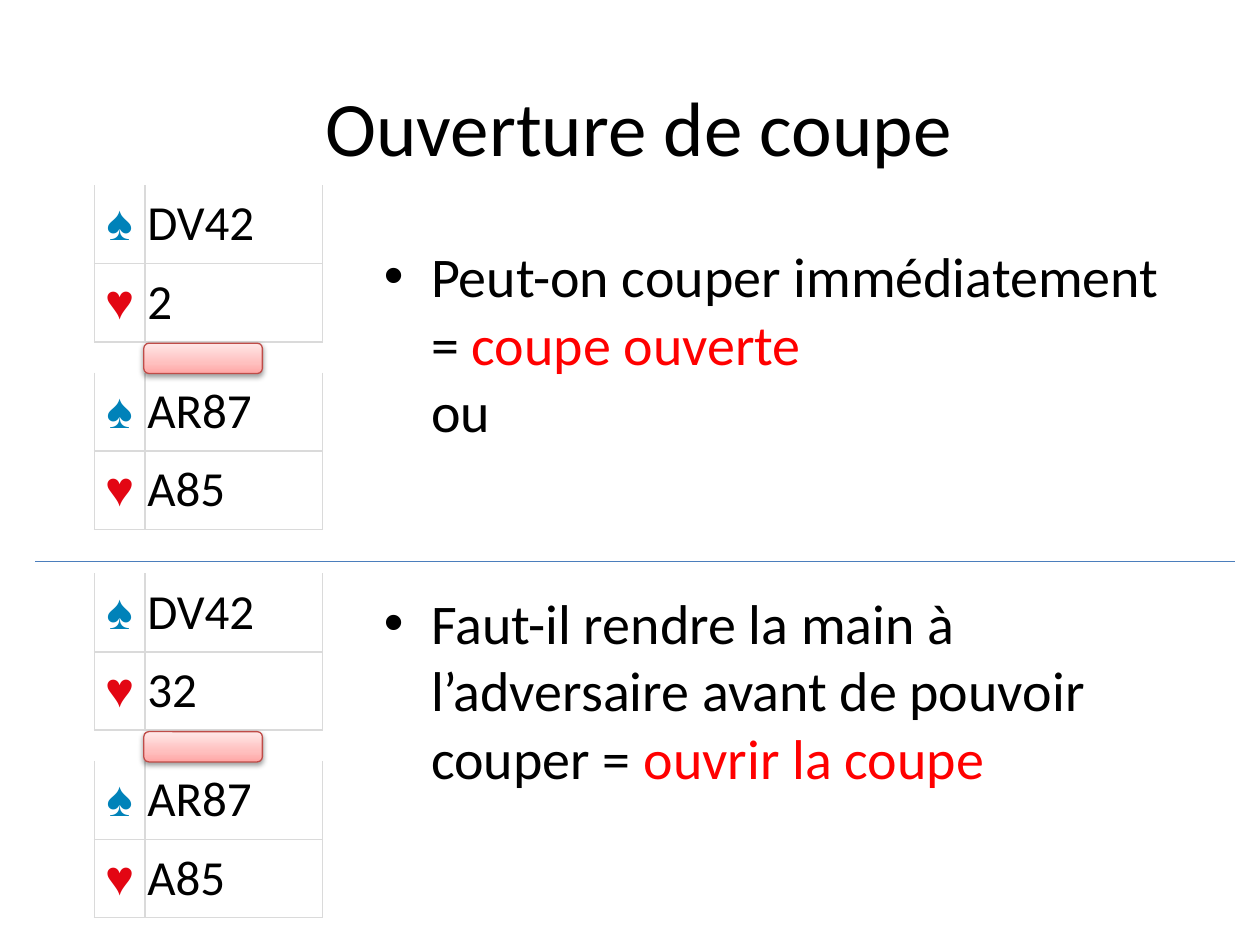
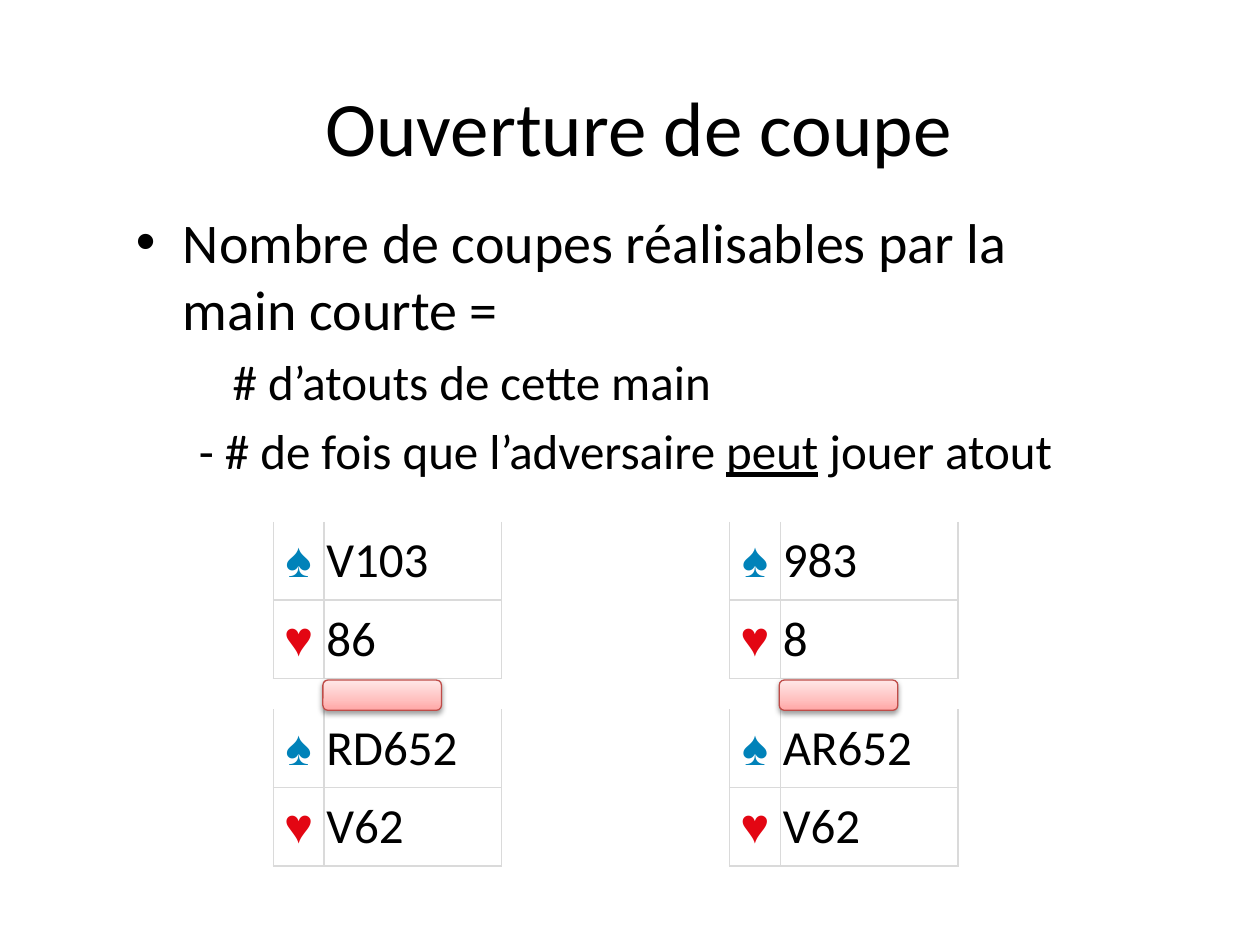
import pptx
import pptx.util
import pptx.dml.color
import pptx.enum.shapes
import pptx.enum.text
import pptx.oxml
import pptx.oxml.ns
from lxml import etree
from pptx.util import Cm, Pt

BLACK, RED, WHITE = "000000", "FF0000", "FFFFFF"
SPADE_BLUE, HEART_RED, GRID_GREY = "0082B9", "E30613", "DADADA"
MAT_EDGE, DIVIDER_BLUE = "BF4C48", "4B7EBC"
MAT_STOPS = [(0, "FFA6A5"), (35, "FFC0BF"), (100, "FFE7E7")]
SUITS = [("♠", SPADE_BLUE), ("♥", HEART_RED)]
NAMESPACE = pptx.oxml.ns.nsdecls("a")
qn = pptx.oxml.ns.qn

COLUMN_WIDTHS = [1.02, 3.58]
ROW_HEIGHT = 1.58
HAND_STEP = 3.78


def color(hex_text):
    return pptx.dml.color.RGBColor.from_string(hex_text)


def add_deal(slide, left, top, hands):
    """Two hands, one above the other, with a card mat between them."""
    for hand_index, holdings in enumerate(hands):
        frame = slide.shapes.add_table(
            2, 2, Cm(left), Cm(top + hand_index * HAND_STEP),
            Cm(sum(COLUMN_WIDTHS)), Cm(2 * ROW_HEIGHT))
        table = frame.table
        table.first_row = table.horz_banding = False
        for column, width in zip(table.columns, COLUMN_WIDTHS):
            column.width = Cm(width)
        for row_index, ((symbol, suit_color), cards) in enumerate(zip(SUITS, holdings)):
            table.rows[row_index].height = Cm(ROW_HEIGHT)
            contents = [
                (symbol, "Times New Roman", suit_color, pptx.enum.text.PP_ALIGN.CENTER),
                (cards, "Calibri", BLACK, pptx.enum.text.PP_ALIGN.LEFT)]
            for column_index, (text, font_name, text_color, alignment) in enumerate(contents):
                cell = table.cell(row_index, column_index)
                # Borders on every side except the top of the hand
                properties = cell._tc.get_or_add_tcPr()
                for side in "LRTB":
                    line = etree.SubElement(properties, qn("a:ln" + side), w=str(Pt(1)))
                    if side == "T" and row_index == 0:
                        etree.SubElement(line, qn("a:noFill"))
                    else:
                        fill = etree.SubElement(line, qn("a:solidFill"))
                        etree.SubElement(fill, qn("a:srgbClr"), val=GRID_GREY)
                cell.fill.solid()
                cell.fill.fore_color.rgb = color(WHITE)
                cell.margin_left = cell.margin_right = Cm(0.05)
                cell.margin_top = cell.margin_bottom = Cm(0.05)
                cell.vertical_anchor = pptx.enum.text.MSO_ANCHOR.MIDDLE
                cell.text_frame.text = text
                paragraph = cell.text_frame.paragraphs[0]
                paragraph.alignment = alignment
                font = paragraph.runs[0].font
                font.name, font.size = font_name, Pt(28)
                font.color.rgb = color(text_color)

    # Card mat with gradient and soft shadow
    mat = slide.shapes.add_shape(
        pptx.enum.shapes.MSO_SHAPE.ROUNDED_RECTANGLE,
        Cm(left + 1), Cm(top + 3.19), Cm(2.39), Cm(0.61))
    mat.line.color.rgb = color(MAT_EDGE)
    mat.line.width = Pt(0.75)
    mat.shadow.inherit = False
    shape_properties = mat._element.spPr
    stops = "".join(
        f'<a:gs pos="{position * 1000}"><a:srgbClr val="{stop_color}"/></a:gs>'
        for position, stop_color in MAT_STOPS)
    shape_properties.find(qn("a:prstGeom")).addnext(pptx.oxml.parse_xml(
        f'<a:gradFill {NAMESPACE}><a:gsLst>{stops}</a:gsLst>'
        '<a:lin ang="16200000" scaled="0"/></a:gradFill>'))
    shape_properties.find(qn("a:effectLst")).append(pptx.oxml.parse_xml(
        f'<a:outerShdw {NAMESPACE} blurRad="{Pt(3.1)}" dist="{Pt(1.6)}" dir="5400000" '
        f'rotWithShape="0"><a:srgbClr val="{BLACK}"><a:alpha val="38000"/></a:srgbClr>'
        '</a:outerShdw>'))


# Body paragraphs: bullet, indent (cm), size, space before (pt), runs (text, color, underline)
# Deals: left, top (cm), hands
slides = [
    {
        "body_box": (7.49, 4.75, 16.64, 12.57),
        "paragraphs": [
            (True, 0.95, 32, 0, [("Peut-on couper immédiatement = ", BLACK, False),
                                 ("coupe ouverte", RED, False),
                                 ("\v", BLACK, False),
                                 ("ou", BLACK, False)]),
            (True, 0.95, 32, 83, [("Faut-il rendre la main à l’adversaire avant de pouvoir "
                                   "couper = ", BLACK, False),
                                  ("ouvrir la coupe", RED, False)]),
        ],
        "deals": [(1.9, 3.73, [("DV42", "2"), ("AR87", "A85")]),
                  (1.9, 11.56, [("DV42", "32"), ("AR87", "A85")])],
        "divider": True,
    },
    {
        "body_box": (2.49, 4.06, 19.02, 6.58),
        "paragraphs": [
            (True, 0.95, 32, 0, [("Nombre de coupes réalisables par la main courte =",
                                  BLACK, False)]),
            (False, 1.95, 28, 5.6, [("# d’atouts de cette main", BLACK, False)]),
            (False, 1.27, 28, 5.6, [("- # de fois que l’adversaire ", BLACK, False),
                                    ("peut", BLACK, True),
                                    (" jouer atout", BLACK, False)]),
        ],
        "deals": [(5.51, 10.52, [("V103", "86"), ("RD652", "V62")]),
                  (14.71, 10.52, [("983", "8"), ("AR652", "V62")])],
        "divider": False,
    },
]

presentation = pptx.Presentation()
presentation.slide_width = Cm(25.4)
presentation.slide_height = Cm(19.05)

for content in slides:
    slide = presentation.slides.add_slide(presentation.slide_layouts[5])

    # Title
    title = slide.shapes.title
    title.left, title.top, title.width, title.height = Cm(1.45), Cm(0.94), Cm(22.86), Cm(3.18)
    title.text_frame.text = "Ouverture de coupe"
    title.text_frame.vertical_anchor = pptx.enum.text.MSO_ANCHOR.MIDDLE
    title_paragraph = title.text_frame.paragraphs[0]
    title_paragraph.alignment = pptx.enum.text.PP_ALIGN.CENTER
    title_font = title_paragraph.runs[0].font
    title_font.name, title_font.size = "Calibri", Pt(44)
    title_font.color.rgb = color(BLACK)

    # Body text
    body = slide.shapes.add_textbox(*[Cm(length) for length in content["body_box"]])
    body.text_frame.word_wrap = True
    for index, (bullet, indent, size, space_before, runs) in enumerate(content["paragraphs"]):
        paragraph = (body.text_frame.add_paragraph() if index
                     else body.text_frame.paragraphs[0])
        paragraph.space_before = Pt(space_before)
        properties = paragraph._p.get_or_add_pPr()
        properties.set("marL", str(Cm(indent)))
        if bullet:
            properties.set("indent", str(-Cm(indent)))
            etree.SubElement(properties, qn("a:buFont"), typeface="Arial")
            etree.SubElement(properties, qn("a:buChar"), char="•")
        paragraph.font.size = Pt(size)
        for text, text_color, underline in runs:
            if text == "\v":
                paragraph.add_line_break()
                continue
            run = paragraph.add_run()
            run.text = text
            run.font.name, run.font.size = "Calibri", Pt(size)
            run.font.color.rgb = color(text_color)
            if underline:
                run.font.underline = True

    # Deals
    for left, top, hands in content["deals"]:
        add_deal(slide, left, top, hands)

    # Divider between the two deals
    if content["divider"]:
        divider = slide.shapes.add_connector(
            pptx.enum.shapes.MSO_CONNECTOR.STRAIGHT, Cm(0.71), Cm(11.32), Cm(24.9), Cm(11.32))
        divider.line.color.rgb = color(DIVIDER_BLUE)
        divider.line.width = Pt(0.75)
        etree.SubElement(divider._element.spPr, qn("a:effectLst"))

presentation.save("out.pptx")
